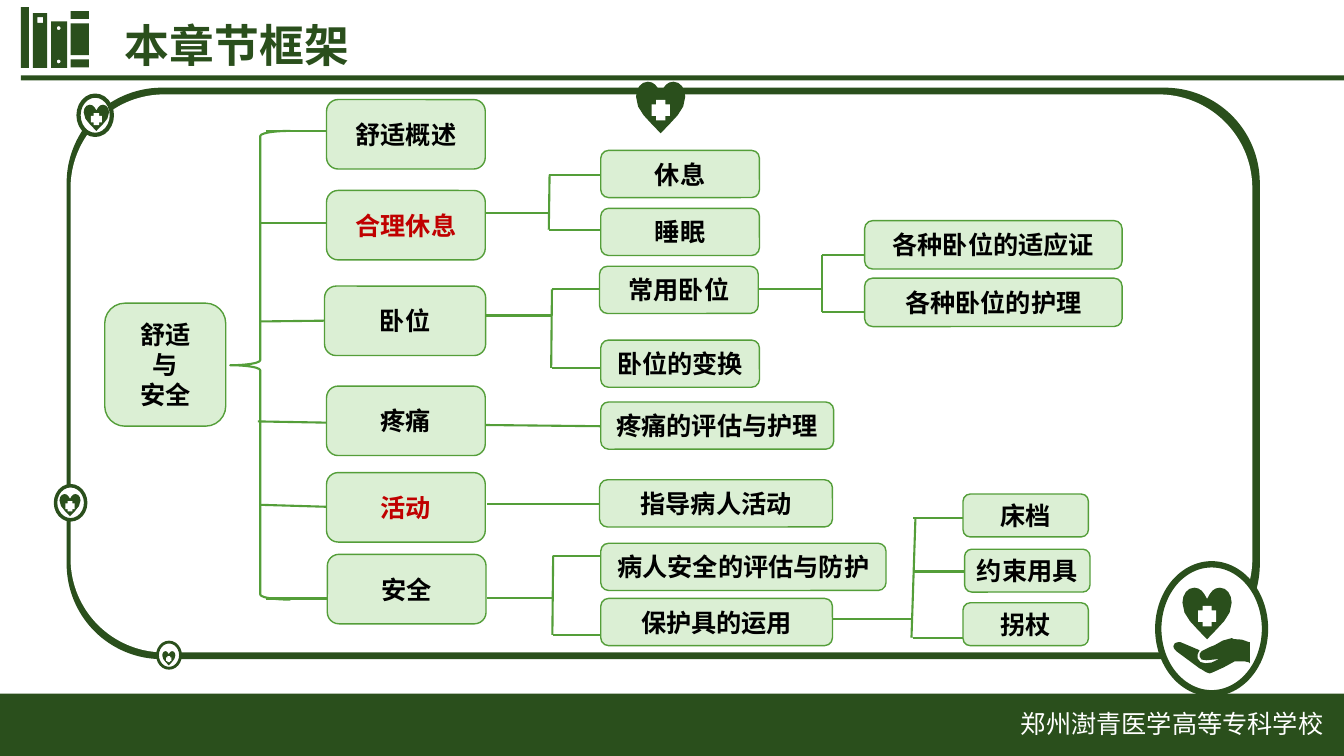
import math
from typing import NamedTuple

from lxml import etree
from pptx import Presentation
from pptx import util as u
from pptx.dml.color import RGBColor
from pptx.enum import shapes, text
from pptx.oxml.ns import qn

FOREST = RGBColor(0x2A, 0x4F, 0x1C)
LEAF = RGBColor(0x54, 0x9E, 0x39)
MINT = RGBColor(0xDB, 0xEF, 0xD4)
WHITE = RGBColor(0xFF, 0xFF, 0xFF)
BLACK = RGBColor(0, 0, 0)
RED = RGBColor(0xC0, 0, 0)
FONT = "Noto Sans CJK SC"
PRESET = shapes.MSO_SHAPE

# Start point, then cubic segments of three points each
HEART = [(.5, .22), (.57, .08), (.64, 0), (.76, 0), (.9, 0), (1, .13), (1, .29),
         (1, .57), (.76, .73), (.5, 1), (.24, .73), (0, .57), (0, .29),
         (0, .13), (.1, 0), (.24, 0), (.36, 0), (.43, .08), (.5, .22)]
# Corner points on a 76 by 35 grid
HAND_GRID = (76, 35)
HAND = [(75, 4), (68, 1.5), (60, 1), (58, 0), (49, 2.5), (41, 7), (36, 9), (28, 13),
        (26.2, 15.5), (26, 18), (28, 21.3), (33, 22), (43, 21), (45, 21), (38, 24.2), (32, 25),
        (26.8, 23.7), (24, 20), (24.2, 16), (26, 12), (7, 4), (5, 4), (1.5, 5), (0, 8),
        (.7, 10.3), (3, 13), (26, 30), (28, 31), (32.5, 33.8), (36, 35), (39, 34),
        (50, 29), (61, 23), (66, 23), (70.5, 23), (75, 24), (76, 25), (76, 4)]


class Box(NamedTuple):
    """A region in centimetres."""
    left: float
    top: float
    width: float
    height: float

    def inside(self, x, y, width, height):
        return Box(self.left + x, self.top + y, width, height)

    def lengths(self):
        return [u.Cm(side) for side in self]

    def scaled(self, points, grid=(1, 1)):
        return [(self.left + x / grid[0] * self.width, self.top + y / grid[1] * self.height)
                for x, y in points]

    def corners(self):
        return self.scaled([(0, 0), (1, 0), (1, 1), (0, 1)])


def write(frame, words, size=18, color=BLACK, bold=False, align=None):
    for number, line in enumerate(words.split("\n")):
        paragraph = frame.add_paragraph() if number else frame.paragraphs[0]
        paragraph.alignment = align
        run = paragraph.add_run()
        run.text = line
        run.font.size, run.font.bold, run.font.name = u.Pt(size), bold, FONT
        run.font.color.rgb = color
        etree.SubElement(run.font._element, qn("a:ea"), typeface=FONT)


def paint(shape, fill=None, line=None, weight=1):
    shape.shadow.inherit = False
    for part, color in ((shape.fill, fill), (shape.line.fill, line)):
        if color is None:
            part.background()
        else:
            part.solid()
            part.fore_color.rgb = color
    if line is not None:
        shape.line.width = u.Pt(weight)
    return shape


def add_preset(slide, preset, box, **look):
    return paint(slide.shapes.add_shape(preset, *box.lengths()), **look)


def add_outline(slide, *contours):
    """Fill closed outlines in centimetres; later contours cut holes."""
    outlines = [[(u.Cm(x), u.Cm(y)) for x, y in contour] for contour in contours]
    builder = slide.shapes.build_freeform(*outlines[0][0], scale=1.0)
    for number, outline in enumerate(outlines):
        if number:
            builder.move_to(*outline[0])
        builder.add_line_segments(outline[1:], close=True)
    paint(builder.convert_to_shape(), fill=FOREST)


def sample(controls, steps):
    """Points along chained cubic curves."""
    points = []
    for start in range(0, len(controls) - 1, 3):
        a, b, c, d = controls[start:start + 4]
        for step in range(steps):
            t = step / steps
            s = 1 - t
            points.append([s**3 * a[i] + 3 * s * s * t * b[i] + 3 * s * t * t * c[i] + t**3 * d[i]
                           for i in (0, 1)])
    return points


def draw_heart(slide, box, cross_share):
    add_outline(slide, box.scaled(sample(HEART, 4 if box.width > 1 else 3)))
    width, height = cross_share * box.width, (cross_share + .03) * box.height
    cross = box.inside((box.width - width) / 2, .55 * box.height - height / 2, width, height)
    add_preset(slide, PRESET.CROSS, cross, fill=WHITE)


def draw_header(slide, box):
    add_preset(slide, PRESET.RECTANGLE, box.inside(0, 1.72, box.width, .13), fill=FOREST)
    for book in ((0, 0, .2, 1.53), (1.25, 1.32, .46, .2), (1.25, .41, .46, .8), (1.25, .1, .46, .2)):
        add_preset(slide, PRESET.RECTANGLE, box.inside(*book), fill=FOREST)
    rings = [[(box.left + .95 + .05 * math.cos(turn * math.pi / 4),
               box.top + y + .05 * math.sin(turn * math.pi / 4)) for turn in range(8)]
             for y in (.53, 1.37)]
    add_outline(slide, box.inside(.76, .36, .4, 1.17).corners(), *rings)
    add_outline(slide, box.inside(.3, .15, .36, 1.38).corners(),
                box.inside(.41, .25, .15, .15).corners())

    title = slide.shapes.title
    title.left, title.top, title.width, title.height = box.inside(2.11, .15, 9.93, 1.22).lengths()
    frame = title.text_frame
    frame.auto_size = text.MSO_AUTO_SIZE.NONE
    frame.vertical_anchor = text.MSO_ANCHOR.TOP
    frame.margin_left = u.Cm(.51)
    write(frame, "本章节框架", size=32, color=FOREST, bold=True, align=text.PP_ALIGN.LEFT)


def draw_footer(slide, box):
    add_preset(slide, PRESET.RECTANGLE, box, fill=FOREST)
    school = slide.shapes.add_textbox(*box.inside(25.48, .25, 8.2, 1.02).lengths())
    school.text_frame.word_wrap = False
    write(school.text_frame, "郑州澍青医学高等专科学校", color=WHITE)


def draw_frame(slide, box):
    add_preset(slide, PRESET.ROUNDED_RECTANGLE, box, fill=FOREST)
    add_preset(slide, PRESET.ROUNDED_RECTANGLE, box.inside(.13, .2, 29.72, 14),
               fill=WHITE, line=WHITE, weight=1.75)
    badges = [((27.51, 12.01, 2.69, 3.25), 4.5, (28.12, 12.6, 1.24, 1.3), .37),
              ((.3, .2, .84, .99), 3, (.43, .43, .64, .66), .43),
              ((-.28, 10.03, .76, .86), 2.5, (-.18, 10.24, .53, .56), .43),
              ((2.29, 13.97, .58, .66), 2, (2.41, 14.2, .33, .36), .4)]
    for ring, weight, heart, cross_share in badges:
        add_preset(slide, PRESET.OVAL, box.inside(*ring), fill=WHITE, line=FOREST, weight=weight)
        draw_heart(slide, box.inside(*heart), cross_share)
    draw_heart(slide, box.inside(14.35, -.15, 1.24, 1.3), .37)
    add_outline(slide, box.inside(27.89, 13.87, 1.93, .89).scaled(HAND, HAND_GRID))


def draw_tree(slide, box):
    def link(x1, y1, x2, y2):
        ends = (box.left + x1, box.top + y1, box.left + x2, box.top + y2)
        line = slide.shapes.add_connector(shapes.MSO_CONNECTOR.STRAIGHT, *map(u.Cm, ends))
        line.line.color.rgb, line.line.width = LEAF, u.Pt(1.5)
        etree.SubElement(line._element.spPr, qn("a:effectLst"))

    def bracket(stem, y, spine, end, branches, lean=.01):
        link(stem, y, spine, y)
        link(spine + lean, branches[0], spine - lean, branches[-1])
        for branch in branches:
            link(spine, branch, end, branch)

    def node(words, x, y, width, height, color=BLACK):
        shape = add_preset(slide, PRESET.ROUNDED_RECTANGLE, box.inside(x, y, width, height),
                           fill=MINT, line=LEAF)
        frame = shape.text_frame
        frame.margin_left = frame.margin_right = u.Cm(.1)
        frame.vertical_anchor = text.MSO_ANCHOR.MIDDLE
        write(frame, words, color=color, bold=True, align=text.PP_ALIGN.CENTER)

    add_preset(slide, PRESET.LEFT_BRACE, box.inside(3.16, .79, 1.52, 11.81), line=LEAF, weight=1.5)
    for x, start, end in ((4.06, .79, .79), (3.91, 3.1, 3.1), (3.91, 5.59, 5.57),
                          (3.86, 8.11, 8.14), (3.91, 10.21, 10.26), (4.06, 12.57, 12.57)):
        link(x, start, 5.59, end)
    link(9.55, 8.2, 12.5, 8.23)
    link(9.63, 10.19, 12.48, 10.19)
    bracket(9.6, 2.85, 11.2, 12.5, (1.89, 3.28))
    bracket(9.6, 5.44, 11.26, 12.5, (4.78, 6.76))
    bracket(16.46, 4.78, 18.07, 19.33, (3.91, 5.36), lean=0)
    bracket(9.63, 12.55, 11.29, 13.2, (11.49, 13.49))
    bracket(18.29, 13.08, 20.38, 21.66, (10.54, 11.89, 13.56), lean=.05)

    node("舒适\n与\n安全", 0, 5.13, 3.05, 3.1)
    for words, x, y, width, color in (
            ("舒适概述", 5.59, 0, 4, BLACK), ("合理休息", 5.59, 2.29, 4, RED),
            ("卧位", 5.54, 4.7, 4.06, BLACK), ("疼痛", 5.59, 7.22, 4, BLACK),
            ("活动", 5.59, 9.4, 4, RED), ("安全", 5.61, 11.46, 4, BLACK)):
        node(words, x, y, width, 1.75, color)
    for words, x, y, width in (
            ("休息", 12.5, 1.28, 4), ("睡眠", 12.5, 2.74, 4), ("常用卧位", 12.47, 4.2, 4),
            ("卧位的变换", 12.5, 6.06, 4), ("疼痛的评估与护理", 12.5, 7.62, 5.87),
            ("指导病人活动", 12.47, 9.58, 5.87), ("病人安全的评估与防护", 12.5, 11.18, 7.19),
            ("保护具的运用", 12.5, 12.57, 5.84)):
        node(words, x, y, width, 1.19)
    for words, y in (("各种卧位的适应证", 3.05), ("各种卧位的护理", 4.5)):
        node(words, 19.15, y, 6.49, 1.22)
    for words, x, y in (("床档", 21.63, 9.94), ("约束用具", 21.67, 11.33), ("拐杖", 21.63, 12.68)):
        node(words, x, y, 3.16, 1.08)


def main():
    deck = Presentation()
    deck.slide_width, deck.slide_height = u.Cm(33.87), u.Cm(19.05)
    slide = deck.slides.add_slide(deck.slide_layouts[5])
    draw_footer(slide, Box(0, 17.48, 33.87, 1.57))
    draw_header(slide, Box(.53, .18, 33.34, 1.85))
    draw_frame(slide, Box(1.68, 2.21, 30.07, 14.4))
    draw_tree(slide, Box(2.64, 2.51, 25.64, 13.77))
    deck.save("out.pptx")


if __name__ == "__main__":
    main()
